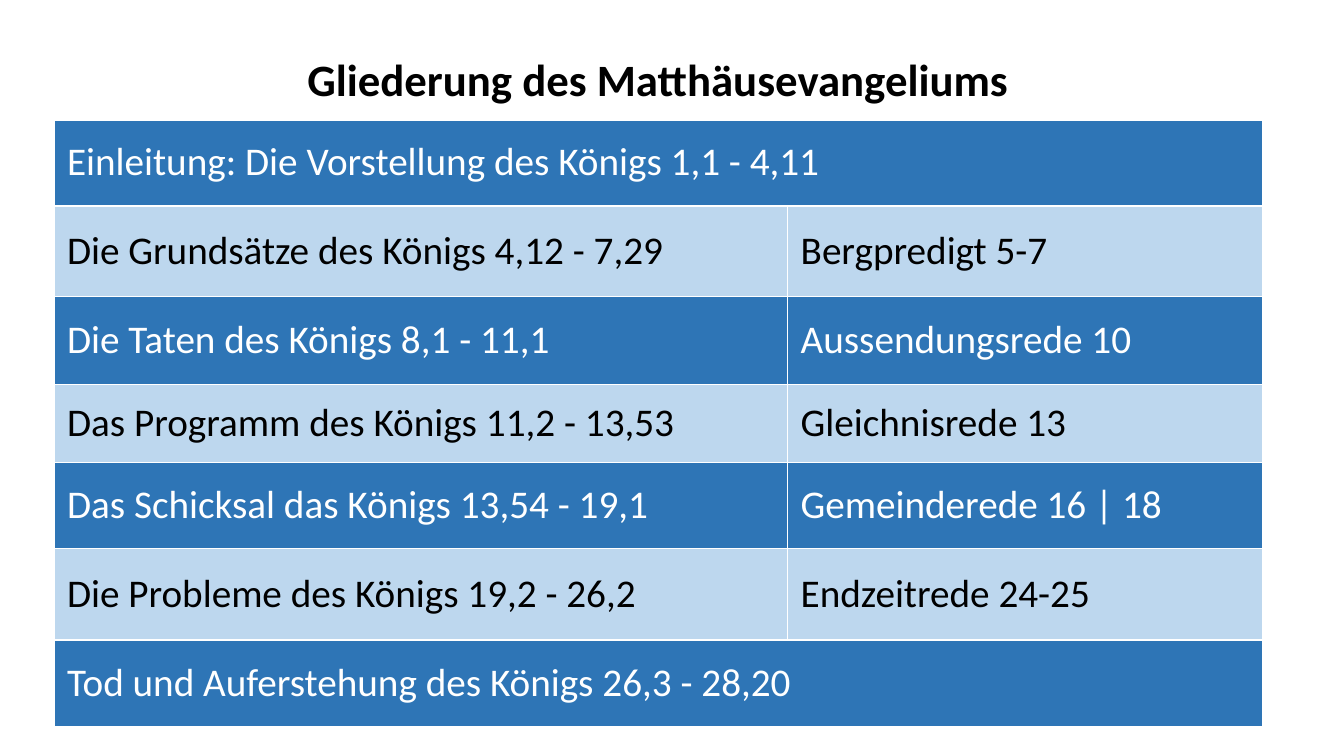
from dataclasses import dataclass

from lxml.etree import SubElement
from pptx import Presentation
from pptx.dml.color import RGBColor
from pptx.enum.text import MSO_ANCHOR, PP_ALIGN
from pptx.oxml.ns import qn
from pptx.util import Cm, Pt


@dataclass(frozen=True)
class Theme:
    font: str = "Calibri"
    title_size: int = 32
    body_size: int = 28
    white: str = "FFFFFF"
    black: str = "000000"
    dark_blue: str = "2E75B6"
    light_blue: str = "BDD7EE"
    border_width: int = 1
    title_rule_width: int = 3


theme = Theme()


def add_border(cell, side, width):
    line = SubElement(cell._tc.get_or_add_tcPr(), qn(f"a:ln{side}"), w=str(Pt(width)))
    fill = SubElement(line, qn("a:solidFill"))
    SubElement(fill, qn("a:srgbClr"), val=theme.white)


outline = [
    ("Gliederung des Matthäusevangeliums",),
    ("Einleitung: Die Vorstellung des Königs 1,1 - 4,11",),
    ("Die Grundsätze des Königs 4,12 - 7,29", "Bergpredigt 5-7"),
    ("Die Taten des Königs 8,1 - 11,1", "Aussendungsrede 10"),
    ("Das Programm des Königs 11,2 - 13,53", "Gleichnisrede 13"),
    ("Das Schicksal das Königs 13,54 - 19,1", "Gemeinderede 16 | 18"),
    ("Die Probleme des Königs 19,2 - 26,2", "Endzeitrede 24-25"),
    ("Tod und Auferstehung des Königs 26,3 - 28,20",),
]
column_widths = [18.49, 11.96]
row_heights = [1.88, 2.2, 2.28, 2.22, 1.97, 2.16, 2.31, 2.18]

presentation = Presentation()
presentation.slide_width = Cm(33.87)
presentation.slide_height = Cm(19.05)
slide = presentation.slides.add_slide(presentation.slide_layouts[6])

table = slide.shapes.add_table(
    len(outline), len(column_widths),
    Cm(1.36), Cm(1.11), Cm(sum(column_widths)), Cm(sum(row_heights)),
).table
table.horz_banding = False

for column, width in zip(table.columns, column_widths):
    column.width = Cm(width)

for row_index, (texts, height) in enumerate(zip(outline, row_heights)):
    table.rows[row_index].height = Cm(height)
    is_title = row_index == 0
    if is_title:
        fill_color, text_color = theme.white, theme.black
    elif row_index % 2:
        fill_color, text_color = theme.dark_blue, theme.white
    else:
        fill_color, text_color = theme.light_blue, theme.black

    if len(texts) == 1:
        table.cell(row_index, 0).merge(table.cell(row_index, 1))

    for column_index in range(len(column_widths)):
        cell = table.cell(row_index, column_index)
        for side in "LRTB":
            at_title_rule = (row_index, side) in ((0, "B"), (1, "T"))
            add_border(cell, side, theme.title_rule_width if at_title_rule else theme.border_width)
        cell.fill.solid()
        cell.fill.fore_color.rgb = RGBColor.from_string(fill_color)
        cell.vertical_anchor = MSO_ANCHOR.MIDDLE
        cell.margin_left = cell.margin_right = Cm(0.33)
        cell.margin_top = cell.margin_bottom = Cm(0)

    for column_index, text in enumerate(texts):
        paragraph = table.cell(row_index, column_index).text_frame.paragraphs[0]
        paragraph.text = text
        paragraph.alignment = PP_ALIGN.CENTER if is_title else PP_ALIGN.LEFT
        paragraph.font.name = theme.font
        paragraph.font.size = Pt(theme.title_size if is_title else theme.body_size)
        paragraph.font.bold = is_title
        paragraph.font.color.rgb = RGBColor.from_string(text_color)

presentation.save("out.pptx")
